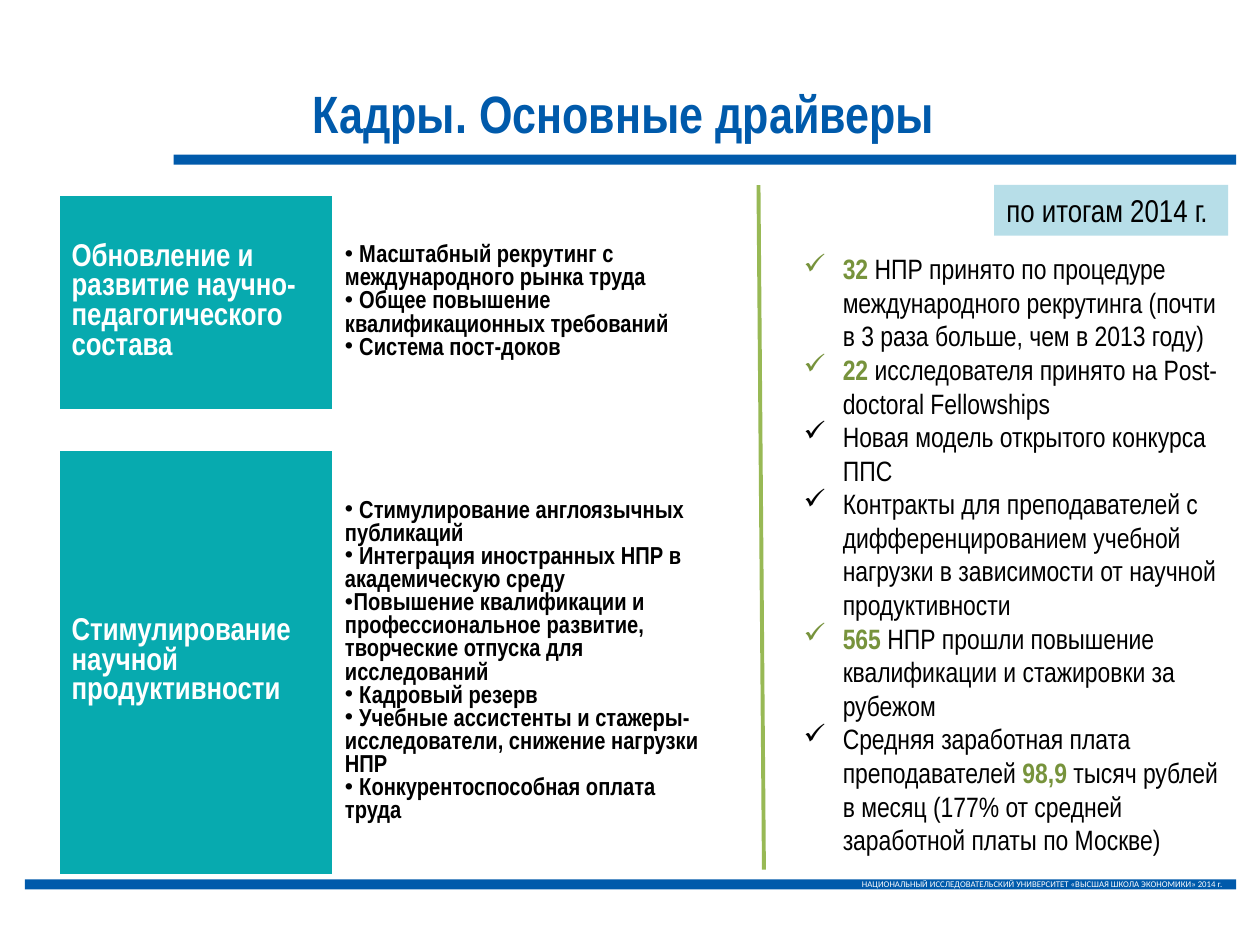
from dataclasses import dataclass

from lxml.etree import SubElement
from pptx import Presentation
from pptx.dml.color import RGBColor
from pptx.enum.shapes import MSO_CONNECTOR as Connector, MSO_SHAPE as Shape
from pptx.enum.text import MSO_ANCHOR as Anchor, MSO_AUTO_SIZE as AutoSize, PP_ALIGN as Align
from pptx.oxml.ns import qn
from pptx.slide import Slide
from pptx.util import Cm, Pt

BLUE = RGBColor(0x00, 0x5A, 0xAB)
TEAL = RGBColor(0x07, 0xAA, 0xAF)
PALE_BLUE = RGBColor(0xB7, 0xDE, 0xE8)
LIGHT_GREEN = RGBColor(0x98, 0xB9, 0x55)
GREEN = RGBColor(0x77, 0x93, 0x3C)
WHITE = RGBColor(0xFF, 0xFF, 0xFF)
BLACK = RGBColor(0x00, 0x00, 0x00)

DRIVERS = [
    ("Обновление и развитие научно-педагогического состава", [
        " Масштабный рекрутинг с международного рынка труда",
        " Общее повышение квалификационных требований",
        " Система пост-доков",
    ]),
    ("", [""]),
    ("Стимулирование научной продуктивности", [
        " Стимулирование англоязычных публикаций",
        " Интеграция иностранных НПР в академическую среду",
        "Повышение квалификации и профессиональное развитие, творческие отпуска для исследований",
        " Кадровый резерв",
        " Учебные ассистенты и стажеры-исследователи, снижение нагрузки НПР",
        " Конкурентоспособная оплата труда",
    ]),
]

RESULTS = [
    ("", "32 ", "НПР принято по процедуре международного рекрутинга (почти в 3 раза больше, чем в 2013 году)"),
    ("", "22 ", "исследователя принято на Post-doctoral Fellowships"),
    ("Новая модель открытого конкурса ППС", "", ""),
    ("Контракты для преподавателей с дифференцированием учебной нагрузки "
     "в зависимости от научной продуктивности", "", ""),
    ("", "565", " НПР прошли повышение квалификации и стажировки за рубежом"),
    ("Средняя заработная плата преподавателей ", "98,9",
     " тысяч рублей в месяц (177% от средней заработной платы по Москве)"),
]


@dataclass
class SlideBuilder:
    """Draws elements on one slide in a shared style."""

    slide: Slide
    font_name: str = "Arial Narrow"

    def style(self, paragraph, size, color=BLACK, bold=False, name=None):
        font = paragraph.font
        font.name = name or self.font_name
        font.size = Pt(size)
        font.bold = bold
        font.color.rgb = color

    def bullet(self, paragraph, char, indent=0):
        properties = paragraph._p.get_or_add_pPr()
        properties.set("marL", str(Cm(indent)))
        properties.set("indent", str(-Cm(indent)))
        SubElement(properties, qn("a:buChar")).set("char", char)

    def rectangle(self, left, top, width, height, color):
        shape = self.slide.shapes.add_shape(
            Shape.RECTANGLE, Cm(left), Cm(top), Cm(width), Cm(height))
        shape.shadow.inherit = False
        shape.fill.solid()
        shape.fill.fore_color.rgb = color
        shape.line.fill.background()
        return shape

    def label(self, shape, text, size, color, align, name=None):
        frame = shape.text_frame
        frame.margin_top = frame.margin_bottom = 0
        frame.vertical_anchor = Anchor.MIDDLE
        frame.word_wrap = False
        paragraph = frame.paragraphs[0]
        paragraph.text = text
        paragraph.alignment = align
        self.style(paragraph, size, color, name=name)

    def text_box(self, left, top, width, height):
        box = self.slide.shapes.add_textbox(Cm(left), Cm(top), Cm(width), Cm(height))
        box.text_frame.word_wrap = True
        return box.text_frame

    def title(self, left, top, width, height, text):
        paragraph = self.text_box(left, top, width, height).paragraphs[0]
        paragraph.text = text
        paragraph.alignment = Align.CENTER
        self.style(paragraph, 30, BLUE, bold=True)

    def results(self, left, top, width, height, items):
        frame = self.text_box(left, top, width, height)
        frame.auto_size = AutoSize.SHAPE_TO_FIT_TEXT
        for index, (before, figure, after) in enumerate(items):
            paragraph = frame.add_paragraph() if index else frame.paragraphs[0]
            self.bullet(paragraph, "✓", 0.79)
            self.style(paragraph, 16)
            for text in filter(None, (before, figure, after)):
                run = paragraph.add_run()
                run.text = text
                if text == figure:
                    run.font.bold = True
                    run.font.color.rgb = GREEN

    def cell(self, cell, lines, size, color, fill, bulleted=False):
        cell.fill.solid()
        cell.fill.fore_color.rgb = fill
        cell.vertical_anchor = Anchor.MIDDLE
        if not any(lines):
            cell.margin_top = cell.margin_bottom = 0
        frame = cell.text_frame
        for index, line in enumerate(lines):
            paragraph = frame.add_paragraph() if index else frame.paragraphs[0]
            paragraph.text = line
            if bulleted and line:
                self.bullet(paragraph, "•")
            self.style(paragraph, size, color, bold=True)

    def table(self, left, top, widths, heights, rows):
        frame = self.slide.shapes.add_table(
            len(rows), len(widths), Cm(left), Cm(top), Cm(sum(widths)), Cm(sum(heights)))
        table = frame.table
        table.first_row = table.horz_banding = False
        for column, width in zip(table.columns, widths):
            column.width = Cm(width)
        for row, height, (heading, lines) in zip(table.rows, heights, rows):
            row.height = Cm(height)
            self.cell(row.cells[0], [heading], 18, WHITE, TEAL if heading else WHITE)
            self.cell(row.cells[1], lines, 14, BLACK, WHITE, bulleted=True)

    def line(self, start_x, start_y, end_x, end_y, color, width):
        connector = self.slide.shapes.add_connector(
            Connector.STRAIGHT, Cm(start_x), Cm(start_y), Cm(end_x), Cm(end_y))
        connector.line.color.rgb = color
        connector.line.width = Pt(width)
        SubElement(connector._element.spPr, qn("a:effectLst"))


def main():
    presentation = Presentation()
    presentation.slide_width = Cm(25.4)
    presentation.slide_height = Cm(19.05)
    builder = SlideBuilder(presentation.slides.add_slide(presentation.slide_layouts[6]))

    builder.rectangle(3.5, 3.12, 21.42, 0.2, BLUE)
    footer = builder.rectangle(0.5, 17.73, 24.42, 0.2, BLUE)
    builder.label(footer, "НАЦИОНАЛЬНЫЙ ИССЛЕДОВАТЕЛЬСКИЙ УНИВЕРСИТЕТ «ВЫСШАЯ ШКОЛА ЭКОНОМИКИ» 2014 г.",
                  5, WHITE, Align.RIGHT, "Calibri")
    builder.title(1.17, 1.5, 22.8, 1.45, "Кадры. Основные драйверы")
    builder.table(1.19, 3.94, [5.51, 8], [4.32, 0.81, 8.27], DRIVERS)
    builder.results(15.95, 4.95, 8.94, 12.57, RESULTS)
    builder.line(15.29, 3.73, 15.4, 17.53, LIGHT_GREEN, 2.25)
    period = builder.rectangle(20.04, 3.73, 4.72, 1.02, PALE_BLUE)
    builder.label(period, "по итогам 2014 г.", 18, BLACK, Align.LEFT)

    presentation.save("out.pptx")


if __name__ == "__main__":
    main()
